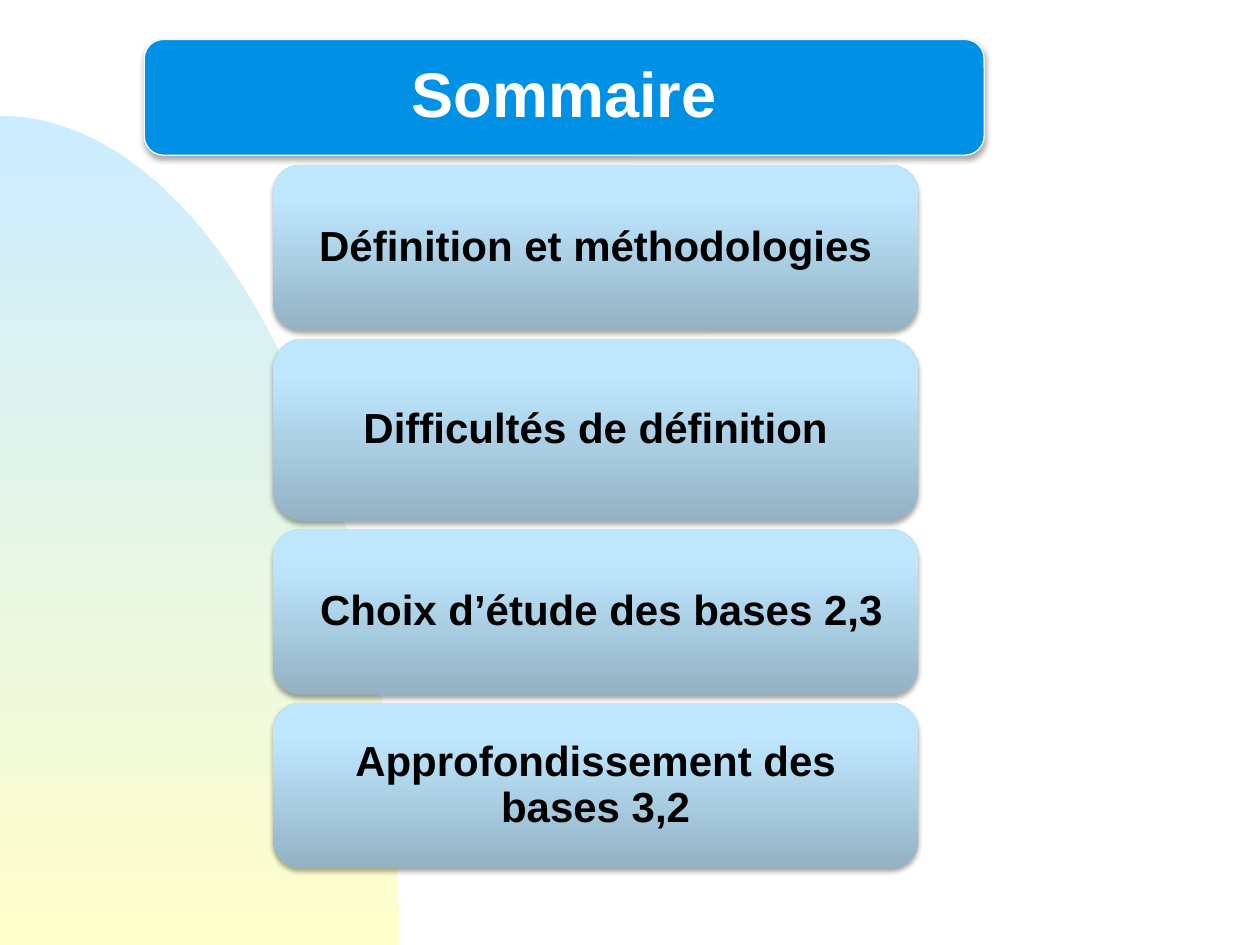
from math import cos, pi, sin

from lxml.etree import SubElement
from pptx import Presentation
from pptx.dml.color import RGBColor
from pptx.enum.shapes import MSO_SHAPE as Shape
from pptx.enum.text import MSO_ANCHOR as Anchor, PP_ALIGN as Align
from pptx.oxml.ns import qn
from pptx.util import Pt

TITLE = "Sommaire"
TOPICS = [  # wording, panel height
    ("Définition et méthodologies", 94.4),
    ("Difficultés de définition", 104),
    (" Choix d’étude des bases 2,3", 94.4),
    ("Approfondissement des bases 3,2", 94.4),
]
THEME = {
    "font": "Arial",
    "title_size": 36,
    "topic_size": 24,
    "title_text": "FFFFFF",
    "topic_text": "010000",
    "banner": "0090E6",
    "banner_line": "F9F9F9",
    "panel": [(0, "93B2C4"), (80, "BEE7FE"), (100, "C0E7FF")],
    "arc": [(0, "CCECFF"), (100, "FFFFCC")],
    "shadow": "000000",
}
SLIDE_WIDTH, SLIDE_HEIGHT = 720, 540
BANNER = (82.4, 22.5, 480, 66.2)
PANEL_LEFT, PANEL_TOP, PANEL_WIDTH, PANEL_GAP = 156.2, 94.3, 368.4, 4.9
ARC_WIDTH, ARC_HEIGHT, ARC_STEPS = 228.2, 473.8, 60


def rgb(name):
    return RGBColor.from_string(name)


def set_gradient(shape, stops, angle):
    """Fill with (percent, colour) stops; angle runs counter-clockwise."""
    shape.fill.gradient()
    shape.fill.gradient_angle = angle
    stop_list = shape._element.spPr.find(".//" + qn("a:gsLst"))
    for stop in list(stop_list):
        stop_list.remove(stop)
    for percent, colour in stops:
        stop = SubElement(stop_list, qn("a:gs"), pos=str(percent * 1000))
        SubElement(stop, qn("a:srgbClr"), val=colour)


def add_shadow(shape):
    shape.shadow.inherit = False
    effects = shape._element.spPr.find(qn("a:effectLst"))
    shadow = SubElement(
        effects, qn("a:outerShdw"), blurRad=str(Pt(3.1)), dist=str(Pt(1.8)),
        dir="5400000", rotWithShape="0")
    colour = SubElement(shadow, qn("a:srgbClr"), val=THEME["shadow"])
    SubElement(colour, qn("a:alpha"), val="35000")


def write(shape, text, size, colour):
    frame = shape.text_frame
    frame.text = text
    frame.word_wrap = True
    frame.vertical_anchor = Anchor.MIDDLE
    paragraph = frame.paragraphs[0]
    paragraph.alignment = Align.CENTER
    paragraph.line_spacing = 0.9
    font = paragraph.font
    font.name, font.size, font.bold = THEME["font"], Pt(size), True
    font.color.rgb = rgb(colour)


def add_rounded(slide, left, top, width, height):
    return slide.shapes.add_shape(
        Shape.ROUNDED_RECTANGLE, Pt(left), Pt(top), Pt(width), Pt(height))


def add_arc(slide):
    """Quarter ellipse centred on the lower left corner of the slide."""
    angles = [pi / 2 * step / ARC_STEPS for step in range(ARC_STEPS + 1)]
    points = [(Pt(ARC_WIDTH * sin(angle)),
               Pt(SLIDE_HEIGHT - ARC_HEIGHT * cos(angle))) for angle in angles]
    builder = slide.shapes.build_freeform(0, Pt(SLIDE_HEIGHT))
    builder.add_line_segments(points, close=True)
    arc = builder.convert_to_shape()
    set_gradient(arc, THEME["arc"], 270)
    arc.line.fill.background()
    arc.shadow.inherit = False


def add_banner(slide):
    banner = add_rounded(slide, *BANNER)
    banner.fill.solid()
    banner.fill.fore_color.rgb = rgb(THEME["banner"])
    banner.line.color.rgb = rgb(THEME["banner_line"])
    banner.line.width = Pt(0.75)
    add_shadow(banner)
    title = slide.shapes.title
    title.left, title.top, title.width, title.height = map(Pt, BANNER)
    write(title, TITLE, THEME["title_size"], THEME["title_text"])
    banner._element.addnext(title._element)  # title in front of its banner


def add_panels(slide):
    top = PANEL_TOP
    for text, height in TOPICS:
        panel = add_rounded(slide, PANEL_LEFT, top, PANEL_WIDTH, height)
        set_gradient(panel, THEME["panel"], 90)
        panel.line.fill.background()
        add_shadow(panel)
        write(panel, text, THEME["topic_size"], THEME["topic_text"])
        top += height + PANEL_GAP


def main():
    presentation = Presentation()
    presentation.slide_width = Pt(SLIDE_WIDTH)
    presentation.slide_height = Pt(SLIDE_HEIGHT)
    slide = presentation.slides.add_slide(presentation.slide_layouts[5])
    add_arc(slide)
    add_banner(slide)
    add_panels(slide)
    presentation.save("out.pptx")


if __name__ == "__main__":
    main()
